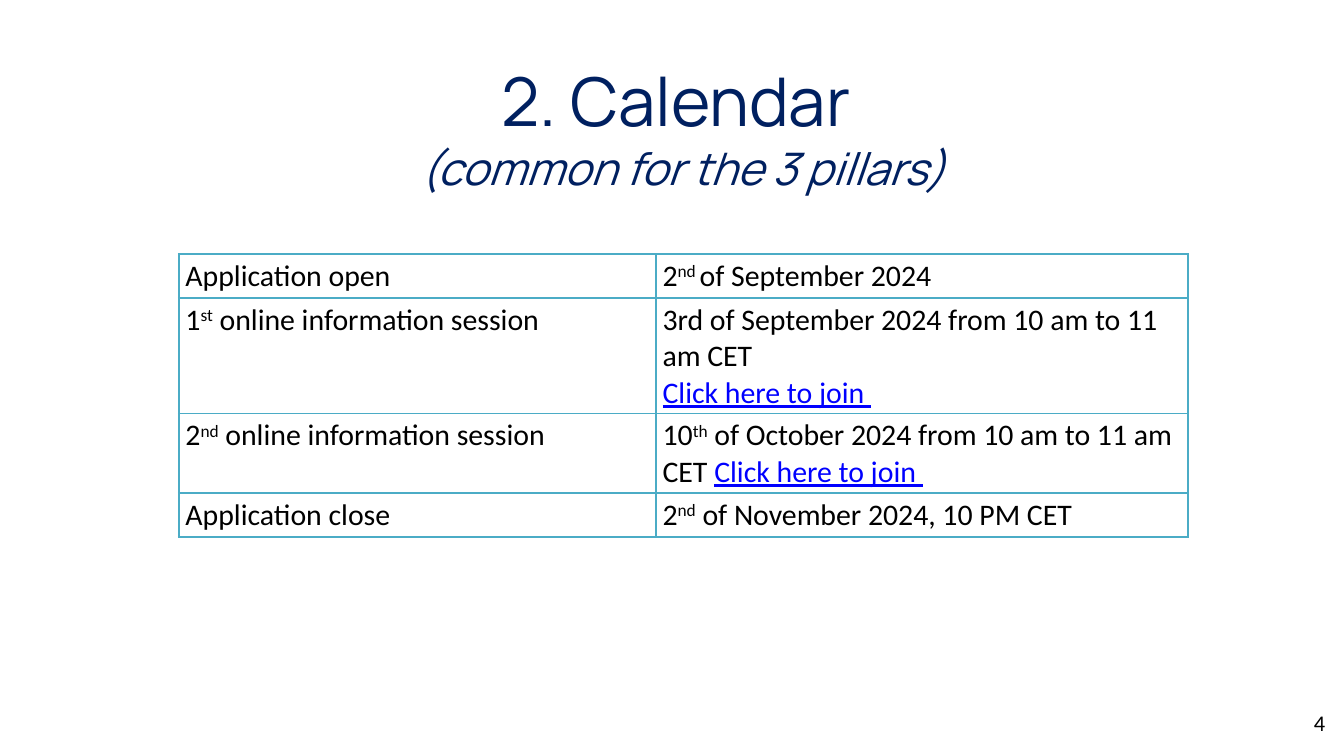
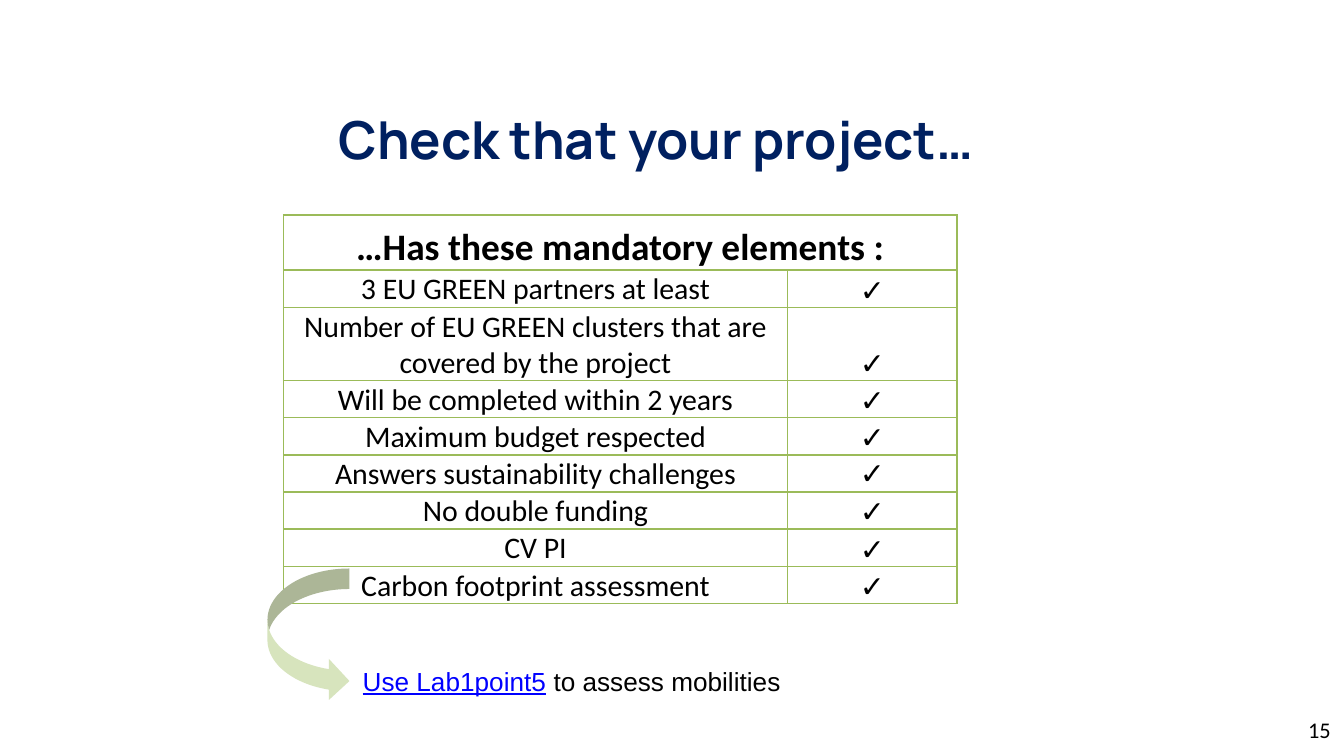
"""Build the calendar and project checklist slides of the call presentation."""
import pptx
import pptx.dml.color
import pptx.enum.shapes
import pptx.enum.text
import pptx.oxml
import pptx.oxml.ns
import pptx.util

Inches, Pt = pptx.util.Inches, pptx.util.Pt
RGBColor = pptx.dml.color.RGBColor
Align = pptx.enum.text.PP_ALIGN
Anchor = pptx.enum.text.MSO_ANCHOR
AutoSize = pptx.enum.text.MSO_AUTO_SIZE

NAVY = RGBColor(0x00, 0x20, 0x60)
BLACK = RGBColor(0x00, 0x00, 0x00)
LINK_BLUE = RGBColor(0x00, 0x00, 0xFF)
TEAL = RGBColor(0x4B, 0xAC, 0xC6)
GREEN = RGBColor(0x9B, 0xBB, 0x59)
PALE_GREEN = RGBColor(0xD7, 0xE4, 0xBD)

PLAIN, RAISED, LINK = "plain", "raised", "link"
JOIN = ("Click here to join ", LINK)

CALENDAR_TITLE = [("2. Calendar ", 36, False, False),
                  ("(common for the 3 pillars)", 24, False, True)]
CALENDAR = [
    ([["Application open"]],
     [["2", ("nd ", RAISED), "of September 2024"]]),
    ([["1", ("st", RAISED), " online information session"]],
     [["3rd of September 2024 from 10 am to 11 am CET"], [JOIN]]),
    ([["2", ("nd", RAISED), " online information session"]],
     [["10", ("th", RAISED), " of October 2024 from 10 am to 11 am CET ", JOIN]]),
    ([["Application close"]],
     [["2", ("nd", RAISED), " of November 2024, 10 PM CET"]]),
]
CALENDAR_COLUMNS = [3.55, 3.96]
CALENDAR_ROWS = [0.24, 0.39, 0.42, 0.23]

CHECK_TITLE = [("Check that your project…", 28, True, False)]
CHECK_HEADING = "…Has these mandatory elements :"
CHECKS = [
    "3 EU GREEN partners at least",
    "Number of EU GREEN clusters that are covered by the project",
    "Will be completed within 2 years",
    "Maximum budget respected",
    "Answers sustainability challenges",
    "No double funding",
    "CV PI",
    "Carbon footprint assessment",
]
CENTRED_CHECK = "Answers sustainability challenges"
CHECK_COLUMNS = [3.75, 1.26]
CHECK_ROWS = [0.41] + [0.26] * len(CHECKS)
FOOTPRINT_HINT = [("Use Lab1point5", LINK), " to assess mobilities"]


def write_runs(paragraph, pieces, size, font="Calibri", align=Align.LEFT, bold=False):
    paragraph.alignment = align
    for piece in pieces:
        words, look = (piece, PLAIN) if isinstance(piece, str) else piece
        run = paragraph.add_run()
        run.text = words
        run.font.size, run.font.name, run.font.bold = Pt(size), font, bold
        run.font.color.rgb = LINK_BLUE if look == LINK else BLACK
        if look == LINK:
            run.font.underline = True
        if look == RAISED:
            run.font._element.set("baseline", "30000")


def add_title_slide(deck, lines, box, number, number_place):
    slide = deck.slides.add_slide(deck.slide_layouts[5])
    title = slide.shapes.title
    title.left, title.top, title.width, title.height = map(Inches, box)
    frame = title.text_frame
    frame.text = "\n".join(line[0] for line in lines)
    frame.auto_size, frame.vertical_anchor = AutoSize.NONE, Anchor.MIDDLE
    for paragraph, (_, size, bold, italic) in zip(frame.paragraphs, lines):
        paragraph.alignment = Align.CENTER
        font = paragraph.runs[0].font
        font.name, font.size, font.bold, font.italic = "Manrope", Pt(size), bold, italic
        font.color.rgb = NAVY
    page = add_text(slide, [str(number)], (*number_place, 2.33, 0.3), 12, "Calibri", Align.RIGHT)
    page.vertical_anchor = Anchor.MIDDLE
    return slide


def add_text(slide, pieces, box, size, font, align=Align.LEFT):
    frame = slide.shapes.add_textbox(*map(Inches, box)).text_frame
    frame.word_wrap = True
    write_runs(frame.paragraphs[0], pieces, size, font, align)
    return frame


def add_grid(slide, place, columns, rows, height, color, margins):
    holder = slide.shapes.add_table(len(rows), len(columns), *map(Inches, place),
                                    Inches(sum(columns)), Inches(height))
    table = holder.table
    table.first_row = table.horz_banding = False
    for column, width in zip(table.columns, columns):
        column.width = Inches(width)
    for row, depth in zip(table.rows, rows):
        row.height = Inches(depth)
    holder.height = Inches(height)
    for cell in table.iter_cells():
        cell.margin_left, cell.margin_top, cell.margin_right, cell.margin_bottom = map(Inches, margins)
        cell.fill.background()
        properties = cell._tc.get_or_add_tcPr()
        for position, side in enumerate("LRTB"):
            properties.insert(position, pptx.oxml.parse_xml(
                f'<a:ln{side} {pptx.oxml.ns.nsdecls("a")} w="{Pt(1)}"><a:solidFill>'
                f'<a:srgbClr val="{color}"/></a:solidFill></a:ln{side}>'))
    return table


def build_calendar(deck):
    slide = add_title_slide(deck, CALENDAR_TITLE, (1.49, 0.4, 7.18, 1.09), 4, (7.63, 5.23))
    table = add_grid(slide, (1.33, 1.89), CALENDAR_COLUMNS, CALENDAR_ROWS, 2.08,
                     TEAL, (0.05, 0.03, 0.05, 0.03))
    for row, entry in enumerate(CALENDAR):
        for column, lines in enumerate(entry):
            frame = table.cell(row, column).text_frame
            for index, pieces in enumerate(lines):
                paragraph = frame.add_paragraph() if index else frame.paragraphs[0]
                write_runs(paragraph, pieces, 16)


def build_checklist(deck):
    slide = add_title_slide(deck, CHECK_TITLE, (0.78, 0.56, 8.2, 0.94), 15, (7.67, 5.28))
    table = add_grid(slide, (2.11, 1.6), CHECK_COLUMNS, CHECK_ROWS, 2.87,
                     GREEN, (0.01, 0.01, 0.01, 0))
    heading = table.cell(0, 0)
    heading.merge(table.cell(0, 1))
    heading.vertical_anchor = Anchor.BOTTOM
    write_runs(heading.text_frame.paragraphs[0], [CHECK_HEADING], 20, align=Align.CENTER, bold=True)
    for row, check in enumerate(CHECKS, 1):
        for column, (words, font) in enumerate([(check, "Calibri"), ("✓", "Arial")]):
            cell = table.cell(row, column)
            cell.vertical_anchor = Anchor.MIDDLE if check == CENTRED_CHECK else Anchor.BOTTOM
            write_runs(cell.text_frame.paragraphs[0], [words], 16, font, Align.CENTER)

    hint = add_text(slide, FOOTPRINT_HINT, (2.6, 4.9, 3.72, 0.34), 14, "Arial")
    hint.auto_size = AutoSize.SHAPE_TO_FIT_TEXT
    arrow = slide.shapes.add_shape(pptx.enum.shapes.MSO_SHAPE.CURVED_RIGHT_ARROW,
                                   *map(Inches, (1.99, 4.23, 0.61, 0.99)))
    arrow.shadow.inherit = False
    arrow.fill.solid()
    arrow.fill.fore_color.rgb = PALE_GREEN
    arrow.line.fill.background()


def main():
    deck = pptx.Presentation()
    deck.slide_width = Inches(10)
    deck.slide_height = deck.slide_width * 9 // 16
    build_calendar(deck)
    build_checklist(deck)
    deck.save("out.pptx")


if __name__ == "__main__":
    main()
